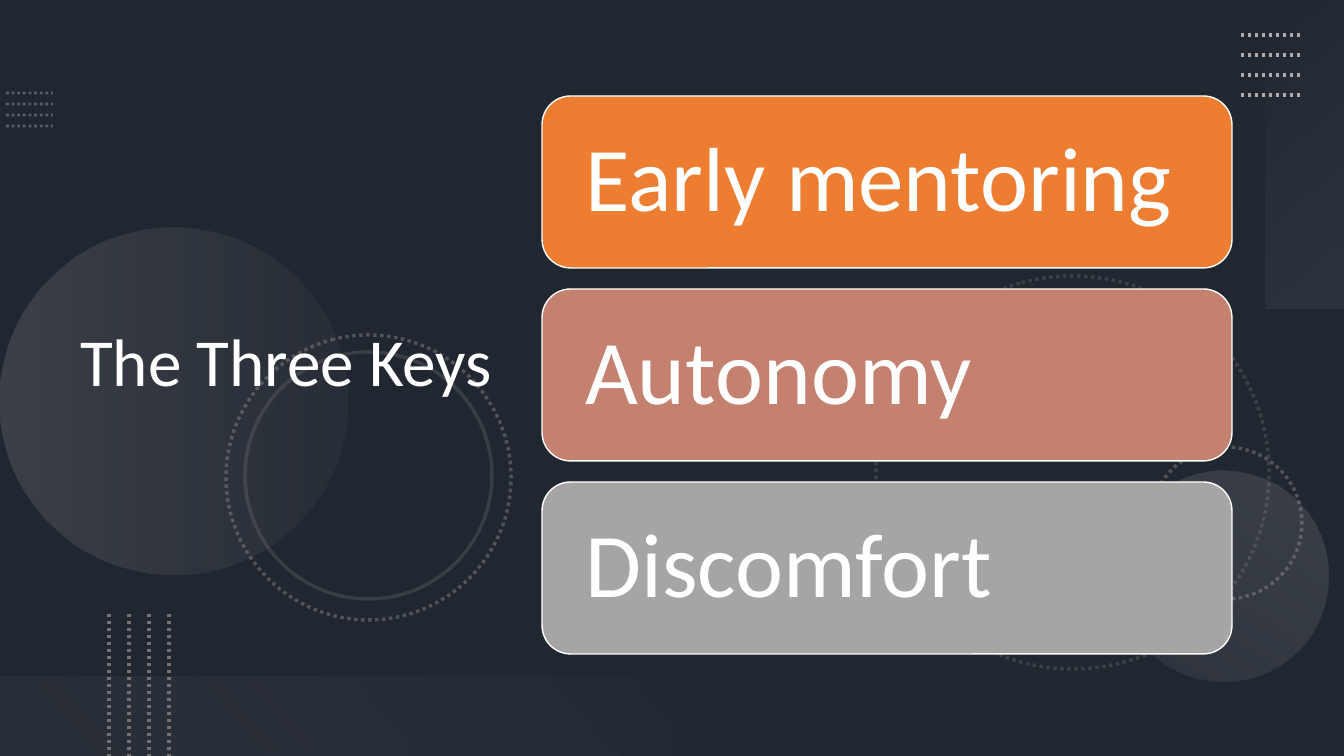
from lxml import etree
from pptx import Presentation
from pptx.dml.color import RGBColor
from pptx.enum.dml import MSO_LINE
from pptx.enum.shapes import MSO_CONNECTOR, MSO_SHAPE
from pptx.enum.text import MSO_ANCHOR, MSO_AUTO_SIZE, PP_ALIGN
from pptx.oxml.ns import qn
from pptx.util import Emu, Pt

SLATE = RGBColor(0x44, 0x54, 0x6A)
BLACK = RGBColor(0x00, 0x00, 0x00)
WHITE = RGBColor(0xFF, 0xFF, 0xFF)
BLUE_GREY = RGBColor(0x84, 0x97, 0xB0)
GREY = RGBColor(0x76, 0x71, 0x71)
SILVER = RGBColor(0xAF, 0xAB, 0xAB)
PALE = RGBColor(0xF5, 0xF5, 0xF5)
ORANGE = RGBColor(0xED, 0x7D, 0x31)
ROSE = RGBColor(0xC4, 0x81, 0x70)
MID_GREY = RGBColor(0xA5, 0xA5, 0xA5)
OVAL, RECT, ROUNDED = MSO_SHAPE.OVAL, MSO_SHAPE.RECTANGLE, MSO_SHAPE.ROUNDED_RECTANGLE
DOTTED, SOLID = MSO_LINE.ROUND_DOT, MSO_LINE.SOLID
STRAIGHT = MSO_CONNECTOR.STRAIGHT
MIDDLE, LEFT = MSO_ANCHOR.MIDDLE, PP_ALIGN.LEFT
NO_FIT = MSO_AUTO_SIZE.NONE

WIDTH, HEIGHT = 1344, 756
SCALE = 914400 / 100.8
FONT = "Calibri"

TITLE = "The Three Keys"
TITLE_BOX = (70, 54, 463, 622)
KEYS = [("Early mentoring", ORANGE), ("Autonomy", ROSE), ("Discomfort", MID_GREY)]
CARD_LEFT, CARD_TOP, CARD_W, CARD_H, CARD_PITCH = 542, 96, 690, 172, 193
CARD_INSET = 35

# first line, step to the next, colour, width, opacity
LEFT_DOTS = ((6, 93, 53, 93), (0, 11), BLUE_GREY, 2, 50)
CORNER_DOTS = ((1241, 35, 1301, 35), (0, 20), SILVER, 2.5, 100)
BOTTOM_DOTS = ((109, 614, 109, 756), (20, 0), GREY, 2.5, 100)
DOTS_PER_GROUP = 4

# left, top, diameter, rotation, dash, opacity
RINGS = [
    (876, 276, 393, 75, DOTTED, 35),
    (1150, 447, 152, 270, DOTTED, 60),
    (226, 335, 285, 75, DOTTED, 60),
    (245, 352, 247, 75, SOLID, 30),
]
# shape, box, rotation, angle, stops of position, colour, opacity
GLOWS = [
    (OVAL, (0, 228, 347, 347), 270, 90, [(0, SILVER, 20), (100, GREY, 10)]),
    (OVAL, (1119, 471, 210, 210), 210, 90, [(0, SILVER, 10), (100, SILVER, 20)]),
    (RECT, (1151, 115, 308, 79), 270, 140, [(0, PALE, 0), (100, SILVER, 10)]),
    (RECT, (0, 677, 672, 79), 180, 140, [(10, GREY, 10), (100, PALE, 0)]),
]


def px(n):
    return Emu(round(n * SCALE))


def set_opacity(shape, percent):
    for clr in shape._element.iter(qn("a:srgbClr")):
        etree.SubElement(clr, qn("a:alpha"), val=str(percent * 1000))


def add_shape(s, kind, box, rotation=0):
    sp = s.shapes.add_shape(kind, *map(px, box))
    sp.shadow.inherit = False
    sp.rotation = rotation
    sp.fill.background()
    sp.line.fill.background()
    return sp


def set_line(line, color, width, dash=SOLID):
    line.color.rgb = color
    line.width = Pt(width)
    line.dash_style = dash


def add_dots(s, first, step, color, width, opacity):
    for i in range(DOTS_PER_GROUP):
        ends = [n + i * step[j % 2] for j, n in enumerate(first)]
        line = s.shapes.add_connector(STRAIGHT, *map(px, ends))
        set_line(line.line, color, width, DOTTED)
        set_opacity(line, opacity)
        etree.SubElement(line._element.spPr, qn("a:effectLst"))


def add_glow(s, kind, box, rotation, angle, stops):
    sp = add_shape(s, kind, box, rotation)
    grad = etree.Element(qn("a:gradFill"), rotWithShape="1")
    gs_list = etree.SubElement(grad, qn("a:gsLst"))
    for pos, color, opacity in stops:
        gs = etree.SubElement(gs_list, qn("a:gs"), pos=str(pos * 1000))
        clr = etree.SubElement(gs, qn("a:srgbClr"), val=str(color))
        etree.SubElement(clr, qn("a:alpha"), val=str(opacity * 1000))
    etree.SubElement(grad, qn("a:lin"), ang=str(angle * 60000), scaled="0")
    spPr = sp._element.spPr
    spPr.replace(spPr.find(qn("a:noFill")), grad)


def add_ring(s, left, top, diameter, rotation, dash, opacity):
    sp = add_shape(s, OVAL, (left, top, diameter, diameter), rotation)
    set_line(sp.line, GREY, 2.5, dash)
    set_opacity(sp, opacity)


def write(tf, text, size):
    tf.text = text
    tf.word_wrap = True
    tf.auto_size = NO_FIT
    tf.vertical_anchor = MIDDLE
    p = tf.paragraphs[0]
    p.alignment = LEFT
    p.line_spacing = 0.9
    font = p.runs[0].font
    font.name, font.size, font.color.rgb = FONT, Pt(size), WHITE


def main():
    prs = Presentation()
    prs.slide_width, prs.slide_height = px(WIDTH), px(HEIGHT)
    s = prs.slides.add_slide(prs.slide_layouts[5])
    s.background.fill.solid()
    s.background.fill.fore_color.rgb = SLATE

    shade = add_shape(s, RECT, (0, 0, WIDTH, HEIGHT))
    shade.fill.solid()
    shade.fill.fore_color.rgb = BLACK
    set_opacity(shade, 53)

    for ring in RINGS:
        add_ring(s, *ring)
    for glow in GLOWS:
        add_glow(s, *glow)
    for dots in (LEFT_DOTS, CORNER_DOTS, BOTTOM_DOTS):
        add_dots(s, *dots)

    title = s.shapes.title
    title.left, title.top, title.width, title.height = map(px, TITLE_BOX)
    write(title.text_frame, TITLE, 48)
    s.shapes._spTree.append(title._element)

    for i, (key, color) in enumerate(KEYS):
        card = add_shape(s, ROUNDED, (CARD_LEFT, CARD_TOP + i * CARD_PITCH, CARD_W, CARD_H))
        card.fill.solid()
        card.fill.fore_color.rgb = color
        set_line(card.line, WHITE, 1)
        tf = card.text_frame
        tf.margin_left = tf.margin_right = px(CARD_INSET)
        write(tf, key, 65)

    prs.save("out.pptx")


if __name__ == "__main__":
    main()
